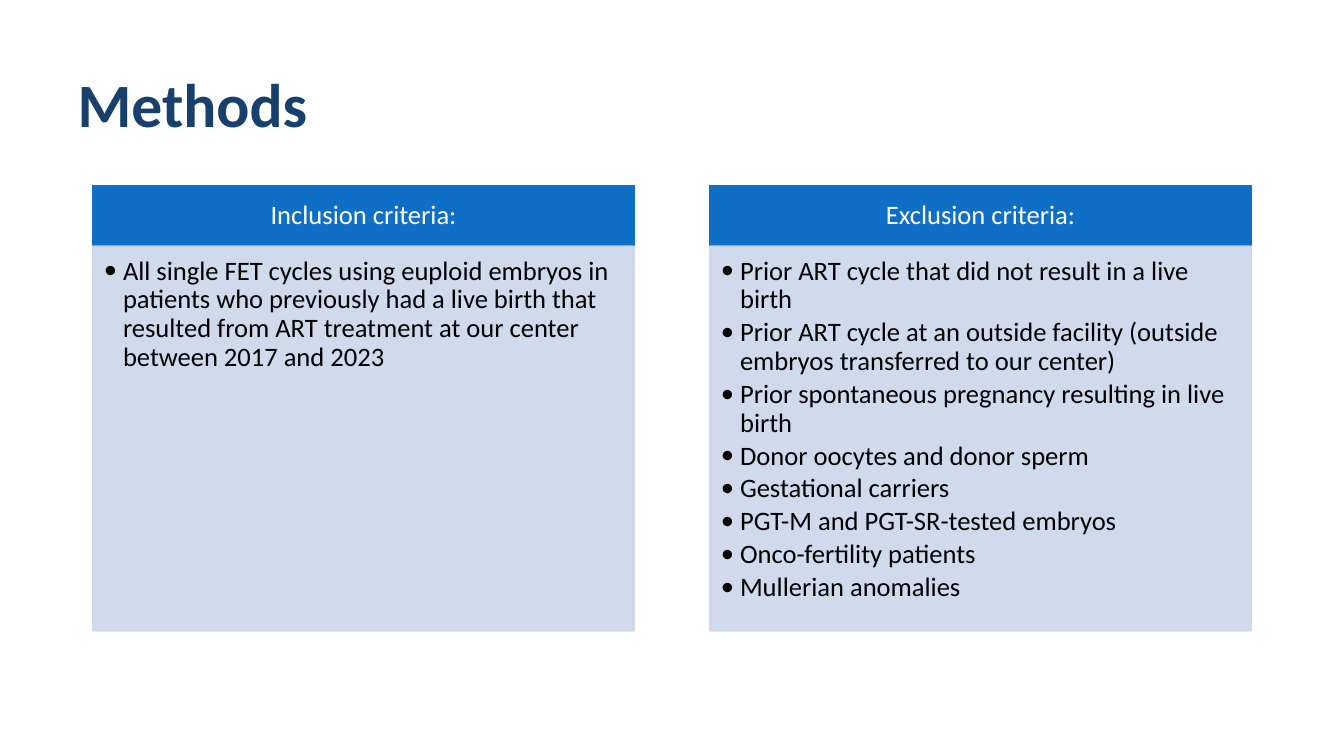
from dataclasses import dataclass

from lxml.etree import SubElement
from pptx import Presentation
from pptx.dml.color import RGBColor
from pptx.enum.text import MSO_ANCHOR, MSO_AUTO_SIZE, PP_ALIGN
from pptx.oxml.ns import qn
from pptx.shapes.placeholder import SlidePlaceholder
from pptx.text.text import _Paragraph
from pptx.util import Inches, Pt


@dataclass(frozen=True)
class Theme:
    font: str = "Calibri"
    title: str = "17406D"
    header: str = "0F6FC6"
    panel: str = "CCD5EA"
    light: str = "FFFFFF"
    dark: str = "000000"
    title_size: float = 44
    text_size: float = 19
    leading: float = 0.9
    panel_alpha: int = 90


@dataclass(frozen=True)
class Grid:
    left: float = 0.92
    column: float = 5.37
    pitch: float = 6.12
    top: float = 1.84
    header: float = 0.6
    body: float = 3.82
    indent: float = 0.19


@dataclass(frozen=True)
class Criteria:
    heading: str
    items: tuple[str, ...]


THEME = Theme()
GRID = Grid()
COLUMNS = (
    Criteria("Inclusion criteria:", (
        "All single FET cycles using euploid embryos in patients who previously had "
        "a live birth that resulted from ART treatment at our center between 2017 and 2023",
    )),
    Criteria("Exclusion criteria:", (
        "Prior ART cycle that did not result in a live birth",
        "Prior ART cycle at an outside facility (outside embryos transferred to our center)",
        "Prior spontaneous pregnancy resulting in live birth",
        "Donor oocytes and donor sperm",
        "Gestational carriers",
        "PGT-M and PGT-SR-tested embryos",
        "Onco-fertility patients",
        "Mullerian anomalies",
    )),
)


def place(sp: SlidePlaceholder, x: float, y: float, w: float, h: float) -> None:
    sp.left, sp.top, sp.width, sp.height = map(Inches, (x, y, w, h))


def paint(sp: SlidePlaceholder, color: str, alpha: int = 100) -> None:
    sp.line.width = Pt(1)
    for fill in (sp.fill, sp.line.fill):
        fill.solid()
        fill.fore_color.rgb = RGBColor.from_string(color)
    if alpha < 100:
        for clr in sp._element.spPr.iter(qn("a:srgbClr")):
            SubElement(clr, qn("a:alpha")).set("val", str(alpha * 1000))


def add_bullet(p: _Paragraph) -> None:
    pPr = p._p.get_or_add_pPr()
    pPr.set("marL", str(Inches(GRID.indent)))
    pPr.set("indent", str(-Inches(GRID.indent)))
    SubElement(pPr, qn("a:buFont")).set("typeface", THEME.font)
    SubElement(pPr, qn("a:buChar")).set("char", "•")


def write(sp: SlidePlaceholder, lines: tuple[str, ...], color: str, size: float,
          insets: tuple[float, float, float, float], anchor: MSO_ANCHOR, align: PP_ALIGN,
          after: float = 0, bold: bool = False, bullets: bool = False) -> None:
    tf = sp.text_frame
    tf.text = "\n".join(lines)
    tf.word_wrap = True
    tf.auto_size = MSO_AUTO_SIZE.NONE
    tf.vertical_anchor = anchor
    tf.margin_left, tf.margin_top, tf.margin_right, tf.margin_bottom = map(Inches, insets)
    for p in tf.paragraphs:
        if bullets:
            add_bullet(p)
        p.alignment = align
        p.line_spacing = THEME.leading
        p.space_before, p.space_after = Pt(0), Pt(after)
        for r in p.runs:
            r.font.name, r.font.size, r.font.bold = THEME.font, Pt(size), bold
            r.font.color.rgb = RGBColor.from_string(color)


def draw_column(header: SlidePlaceholder, body: SlidePlaceholder, index: int,
                criteria: Criteria) -> None:
    x = GRID.left + index * GRID.pitch
    place(header, x, GRID.top, GRID.column, GRID.header)
    paint(header, THEME.header)
    write(header, (criteria.heading,), THEME.light, THEME.text_size,
          (0.15, 0.08, 0.15, 0.08), MSO_ANCHOR.MIDDLE, PP_ALIGN.CENTER)
    place(body, x, GRID.top + GRID.header, GRID.column, GRID.body)
    paint(body, THEME.panel, THEME.panel_alpha)
    write(body, criteria.items, THEME.dark, THEME.text_size,
          (0.11, 0.11, 0.15, 0.17), MSO_ANCHOR.TOP, PP_ALIGN.LEFT, after=3, bullets=True)


def main() -> None:
    """Build the slide comparing inclusion and exclusion criteria."""
    prs = Presentation()
    prs.slide_width, prs.slide_height = Inches(13.33), Inches(7.5)
    slide = prs.slides.add_slide(prs.slide_layouts.get_by_name("Comparison"))
    title = slide.shapes.title
    place(title, 0.67, 0.47, 12, 1.2)
    write(title, ("Methods",), THEME.title, THEME.title_size,
          (0.1, 0.05, 0.1, 0.05), MSO_ANCHOR.MIDDLE, PP_ALIGN.LEFT, bold=True)
    for i, criteria in enumerate(COLUMNS):
        header, body = (slide.placeholders[2 * i + n] for n in (1, 2))
        draw_column(header, body, i, criteria)
    prs.save("out.pptx")


if __name__ == "__main__":
    main()
